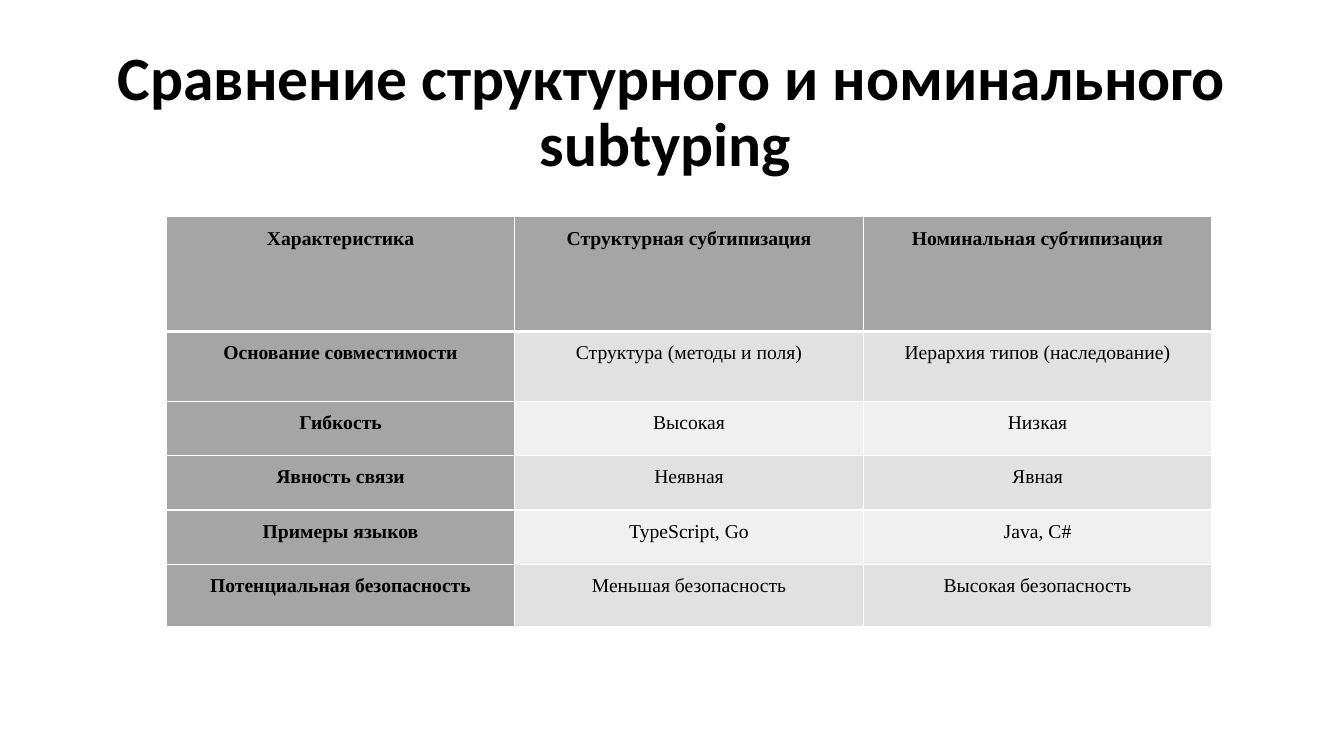
import pptx
import pptx.util
import pptx.dml.color
import pptx.enum.text
import pptx.oxml
import pptx.oxml.ns
from pptx.util import Inches

THEME = {
    "title_font": "Calibri",
    "table_font": "Times New Roman",
    "title_size": 44,
    "table_size": 14,
    "text": "000000",
    "border": "FFFFFF",
    "header": "A5A5A5",
    "bands": ("E1E1E1", "F0F0F0"),
}

ROWS = [
    (1.14, "Характеристика", "Структурная субтипизация", "Номинальная субтипизация"),
    (0.69, "Основание совместимости", "Структура (методы и поля)", "Иерархия типов (наследование)"),
    (0.54, "Гибкость", "Высокая", "Низкая"),
    (0.54, "Явность связи", "Неявная", "Явная"),
    (0.54, "Примеры языков", "TypeScript, Go", "Java, C#"),
    (0.62, "Потенциальная безопасность", "Меньшая безопасность", "Высокая безопасность"),
]


def write(frame, text, font, size, bold, spacing):
    para = frame.paragraphs[0]
    para.alignment = pptx.enum.text.PP_ALIGN.CENTER
    para.line_spacing = spacing
    span = para.add_run()
    span.text = text
    span.font.name = font
    span.font.size = pptx.util.Pt(size)
    span.font.bold = bold
    span.font.color.rgb = pptx.dml.color.RGBColor.from_string(THEME["text"])


def set_borders(cell, widths):
    properties = cell._tc.get_or_add_tcPr()
    for position, (side, width) in enumerate(widths.items()):
        line = pptx.oxml.parse_xml(
            f'<a:ln{side} {pptx.oxml.ns.nsdecls("a")} w="{pptx.util.Pt(width)}">'
            f'<a:solidFill><a:srgbClr val="{THEME["border"]}"/></a:solidFill></a:ln{side}>'
        )
        properties.insert(position, line)


deck = pptx.Presentation()
deck.slide_width = Inches(13.33)
deck.slide_height = Inches(7.5)
page = deck.slides.add_slide(deck.slide_layouts[6])

title = page.shapes.add_textbox(Inches(0.92), Inches(0.4), Inches(11.5), Inches(1.45))
title.text_frame.word_wrap = True
title.text_frame.vertical_anchor = pptx.enum.text.MSO_ANCHOR.MIDDLE
write(title.text_frame, "Сравнение структурного и номинального subtyping ",
      THEME["title_font"], THEME["title_size"], True, 0.9)

height = sum(row[0] for row in ROWS)
table = page.shapes.add_table(
    len(ROWS), 3, Inches(1.65), Inches(2.15), Inches(10.37), Inches(height)
).table
for column in table.columns:
    column.width = Inches(10.37 / 3)

for row_index, (row_height, *texts) in enumerate(ROWS):
    table.rows[row_index].height = Inches(row_height)
    for column_index, text in enumerate(texts):
        cell = table.cell(row_index, column_index)
        heading = row_index == 0 or column_index == 0
        fill = THEME["header"] if heading else THEME["bands"][(row_index - 1) % 2]
        cell.margin_left = cell.margin_right = Inches(0.07)
        cell.margin_top = cell.margin_bottom = 0
        cell.fill.solid()
        cell.fill.fore_color.rgb = pptx.dml.color.RGBColor.from_string(fill)
        set_borders(cell, {
            "L": 1,
            "R": 1,
            "T": 3 if row_index == 1 else 1,
            "B": 3 if row_index == 0 else 1,
        })
        write(cell.text_frame, text, THEME["table_font"], THEME["table_size"], heading, 1.5)

deck.save("out.pptx")
